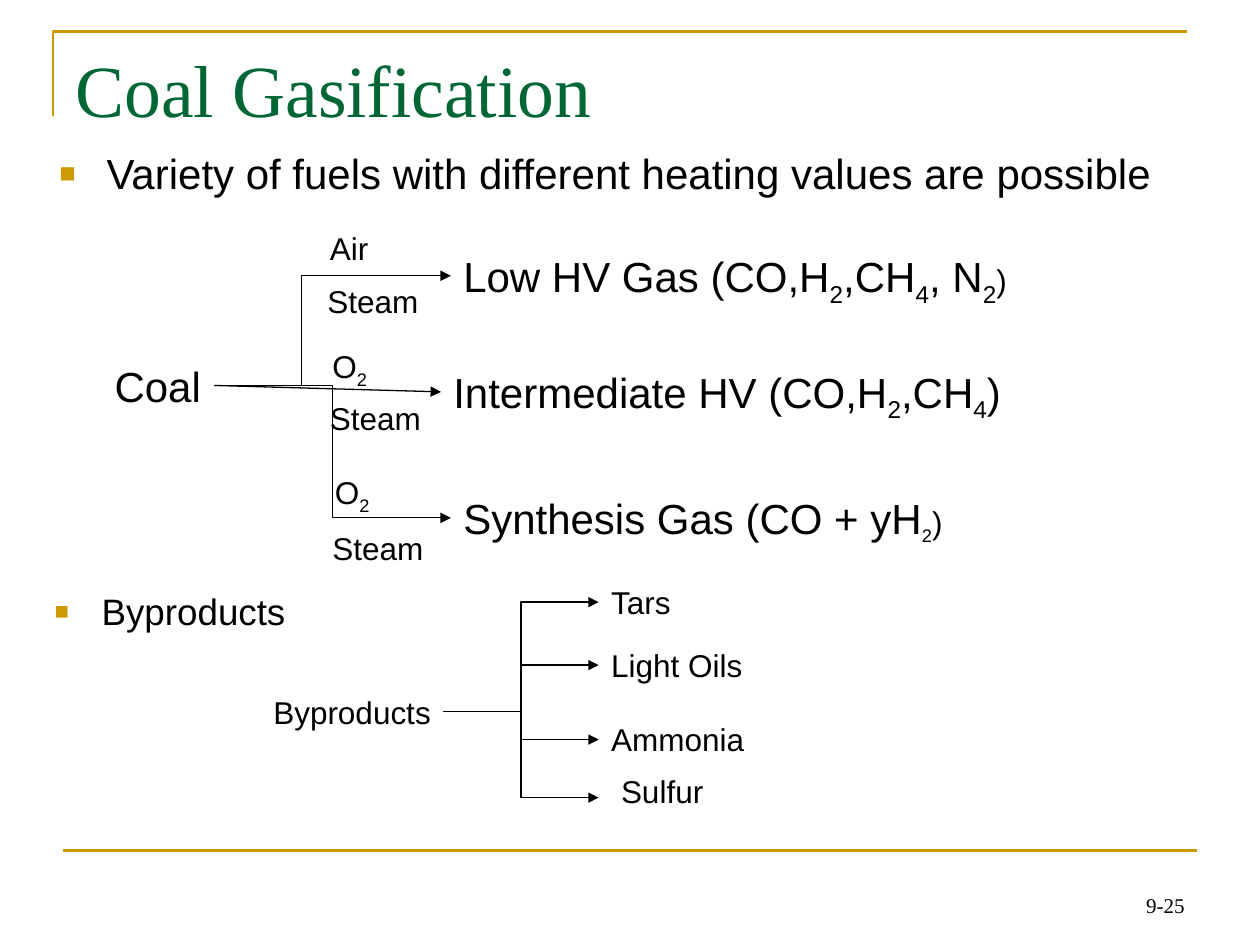
from lxml import etree
from pptx import Presentation
from pptx import util as u
from pptx.dml.color import RGBColor
from pptx.enum import shapes, text
from pptx.oxml import ns

GOLD, GREEN, BLACK = "CC9900", "006633", "000000"
SANS, SERIF = "Arial", "Times New Roman"


def colour(value):
    return RGBColor.from_string(value)


def child(parent, tag, **attributes):
    return etree.SubElement(parent, ns.qn(tag), attributes)


class Sheet:
    font, ink, thin, thick = SANS, BLACK, 0.75, 1.5

    def __init__(self, slide):
        self.slide = slide

    def stroke(self, shape, value, width):
        shape.line.color.rgb = colour(value)
        shape.line.width = u.Pt(width)

    def frame(self, points):
        corners = [(u.Cm(x), u.Cm(y)) for x, y in points]
        builder = self.slide.shapes.build_freeform(*corners[0])
        builder.add_line_segments(corners[1:], close=False)
        outline = builder.convert_to_shape()
        outline.fill.background()
        outline.shadow.inherit = False
        self.stroke(outline, GOLD, self.thick)

    def line(self, start, end, value=GOLD, width=thick, kind="STRAIGHT"):
        connector = self.slide.shapes.add_connector(
            shapes.MSO_CONNECTOR[kind], *(u.Cm(v) for v in start + end))
        self.stroke(connector, value, width)
        child(connector._element.spPr, "a:effectLst")
        return connector

    def arrow(self, start, end, kind="ELBOW", bend=0.5):
        connector = self.line(start, end, self.ink, self.thin, kind)
        child(connector.line._get_or_add_ln(), "a:tailEnd", type="triangle")
        if kind == "ELBOW":
            guides = connector._element.spPr.find(ns.qn("a:prstGeom")).get_or_add_avLst()
            child(guides, "a:gd", name="adj1", fmla=f"val {round(bend * 100000)}")

    def block(self, words, box, size, font=SANS, ink=BLACK):
        area = self.slide.shapes.add_textbox(*(u.Cm(v) for v in box)).text_frame
        area.word_wrap = True
        area.text = words
        self.style(area.paragraphs[0].runs[0], size, font, ink)
        return area

    def style(self, run, size, font=SANS, ink=BLACK):
        run.font.size = u.Pt(size)
        run.font.name = font
        run.font.color.rgb = colour(ink)

    def label(self, formula, left, top, width, height=1.02, size=18, small_runs=0):
        parts = formula.split("|")
        area = self.block(parts[0], (left, top, width, height), size)
        area.word_wrap = False
        area.auto_size = text.MSO_AUTO_SIZE.SHAPE_TO_FIT_TEXT
        for index, part in enumerate(parts[1:], 1):
            run = area.paragraphs[0].add_run()
            run.text = part
            self.style(run, 18 if index >= len(parts) - small_runs else size)
            if index % 2:
                run.font._element.set("baseline", "-25000")

    def bullet(self, words, box, size):
        paragraph = self.block(words, box, size).paragraphs[0]
        paragraph.line_spacing = 0.9
        paragraph.space_before = u.Pt(size * 0.2)
        properties = paragraph._p.get_or_add_pPr()
        indent = u.Cm(0.95)
        properties.set("marL", str(indent))
        properties.set("indent", str(-indent))
        child(child(properties, "a:buClr"), "a:srgbClr", val=GOLD)
        child(properties, "a:buSzPct", val="65000")
        child(properties, "a:buFont", typeface=SANS)
        child(properties, "a:buChar", char="■")


def main():
    deck = Presentation()
    deck.slide_width, deck.slide_height = u.Cm(25.4), u.Cm(19.05)
    sheet = Sheet(deck.slides.add_slide(deck.slide_layouts[6]))

    sheet.frame([(1.07, 2.34), (1.07, 0.64), (23.93, 0.64)])
    sheet.line((1.27, 17.15), (24.13, 17.15))
    number = sheet.block("9-25", (18.21, 17.35, 5.92, 1.27), 12, SERIF)
    number.vertical_anchor = text.MSO_ANCHOR.BOTTOM
    number.paragraphs[0].alignment = text.PP_ALIGN.RIGHT
    sheet.block("Coal Gasification", (1.27, 0.76, 22.86, 3.18), 42, SERIF, GREEN)
    sheet.bullet("Variety of fuels with different heating values are possible",
                 (0.95, 2.96, 22.86, 1.69), 24)
    sheet.bullet("Byproducts", (0.85, 11.85, 22.86, 2.11), 21)

    sheet.label("Coal", 2.06, 7.14, 2.26, 1.27, 24)
    gases = [
        ("Low HV Gas (CO,H|2|,CH|4|, N|2|)", 9.09, 4.93, 11.58, 1),
        ("Intermediate HV (CO,H|2|,CH|4|)", 8.89, 7.26, 11.63, 0),
        ("Synthesis Gas (CO + yH|2|)", 9.09, 9.8, 10.29, 2),
    ]
    for gas, left, top, width, small_runs in gases:
        sheet.label(gas, left, top, width, 1.27, 24, small_runs)

    coal = (4.32, 7.77)
    sheet.arrow(coal, (8.89, 7.9), "STRAIGHT")
    sheet.arrow(coal, (9.09, 5.56), bend=0.37)
    sheet.arrow(coal, (9.09, 10.44))

    reagents = [
        ("Air", 6.4, 4.5, 1.3), ("Steam", 6.35, 5.56, 2.34),
        ("O|2", 6.45, 6.88, 1.24), ("Steam", 6.4, 7.92, 2.34),
        ("O|2", 6.5, 9.42, 1.24), ("Steam", 6.45, 10.54, 2.34),
    ]
    for reagent in reagents:
        sheet.label(*reagent)

    sheet.label("Byproducts", 5.26, 13.84, 3.68)
    byproducts = [
        ("Tars", 12.07, 11.63, 1.78, 12.14),
        ("Light Oils", 12.07, 12.9, 3.15, 13.41),
        ("Ammonia", 12.07, 14.4, 3.2, 14.91),
        ("Sulfur", 12.27, 15.44, 2.16, 16.08),
    ]
    for byproduct, left, top, width, arrow_y in byproducts:
        sheet.label(byproduct, left, top, width)
        sheet.arrow((8.94, 14.35), (12.07, arrow_y))

    deck.save("out.pptx")


if __name__ == "__main__":
    main()
